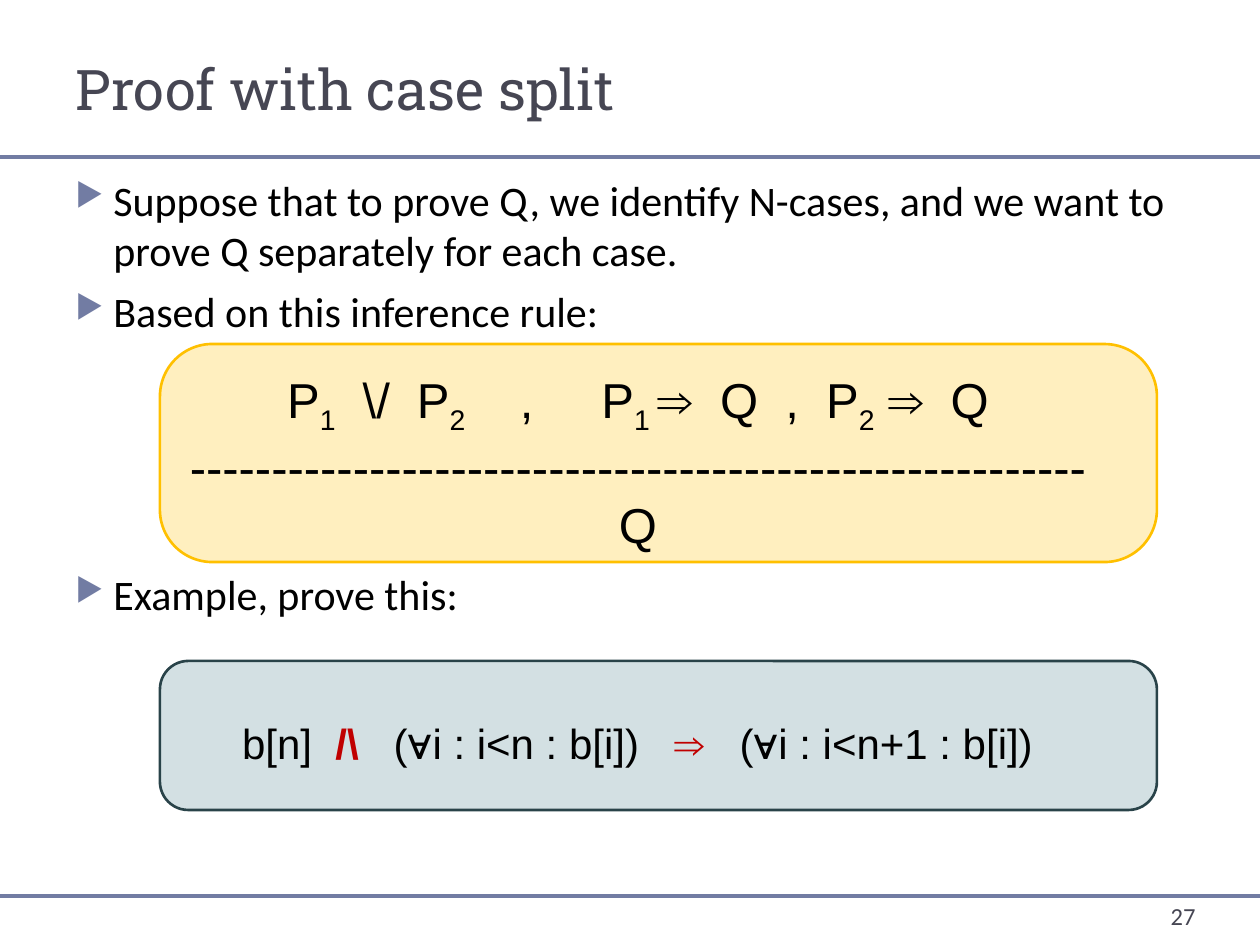
from dataclasses import dataclass

from lxml import etree
from pptx import Presentation
from pptx.dml.color import RGBColor
from pptx.enum.shapes import MSO_CONNECTOR, MSO_SHAPE
from pptx.enum.text import MSO_ANCHOR, MSO_AUTO_SIZE, PP_ALIGN
from pptx.oxml.ns import qn
from pptx.util import Emu, Pt

STRAIGHT = MSO_CONNECTOR.STRAIGHT
ROUNDED = MSO_SHAPE.ROUNDED_RECTANGLE
LEFT, CENTER, RIGHT = PP_ALIGN.LEFT, PP_ALIGN.CENTER, PP_ALIGN.RIGHT
BOTTOM = MSO_ANCHOR.BOTTOM
FIXED = MSO_AUTO_SIZE.NONE

EMU_PER_PX = 914400 / 126
WIDTH, HEIGHT = 1260, 945
BLACK, SLATE, ACCENT, RED = "000000", "464653", "727CA3", "C00000"


@dataclass(frozen=True)
class Box:
    left: int
    top: int
    width: int
    height: int

    def emu(self) -> tuple[Emu, ...]:
        return tuple(map(px, (self.left, self.top, self.width, self.height)))


@dataclass(frozen=True)
class Panel:
    box: Box
    corner: float
    fill: str
    outline: str


@dataclass(frozen=True)
class Piece:
    text: str
    subscript: bool = False
    color: str = BLACK
    bold: bool = False


@dataclass(frozen=True)
class Bullet:
    text: str
    space_before: int = 6


def px(length: int) -> Emu:
    return Emu(round(length * EMU_PER_PX))


def rgb(code: str) -> RGBColor:
    return RGBColor.from_string(code)


def style(paragraph, font: str, size: int, color: str = BLACK, align=LEFT) -> None:
    paragraph.alignment = align
    paragraph.font.name = font
    paragraph.font.size = Pt(size)
    paragraph.font.color.rgb = rgb(color)


def add_rule(slide, y: int) -> None:
    rule = slide.shapes.add_connector(STRAIGHT, 0, px(y), px(WIDTH), px(y))
    rule.line.color.rgb = rgb(ACCENT)
    rule.line.width = Pt(2.25)
    etree.SubElement(rule._element.spPr, qn("a:effectLst"))


def add_panel(slide, panel: Panel) -> None:
    """Draw a rounded panel with a 25 % opaque fill."""
    shape = slide.shapes.add_shape(ROUNDED, *panel.box.emu())
    shape.shadow.inherit = False
    shape.adjustments[0] = panel.corner
    shape.fill.solid()
    shape.fill.fore_color.rgb = rgb(panel.fill)
    tint = shape._element.spPr.find(qn("a:solidFill")).find(qn("a:srgbClr"))
    etree.SubElement(tint, qn("a:alpha"), val="25000")
    shape.line.color.rgb = rgb(panel.outline)
    shape.line.width = Pt(1.5)


def add_text_frame(slide, box: Box, wrap: bool = True):
    frame = slide.shapes.add_textbox(*box.emu()).text_frame
    frame.word_wrap = wrap
    return frame


def next_paragraph(frame, index: int):
    return frame.add_paragraph() if index else frame.paragraphs[0]


def add_bullets(slide, box: Box, bullets: list[Bullet]) -> None:
    frame = add_text_frame(slide, box)
    for index, bullet in enumerate(bullets):
        paragraph = next_paragraph(frame, index)
        paragraph.text = bullet.text
        style(paragraph, "Calibri", 24)
        paragraph.space_before = Pt(bullet.space_before)
        properties = paragraph._p.get_or_add_pPr()
        properties.set("marL", str(px(38)))
        properties.set("indent", str(-px(38)))
        marker = [
            etree.Element(qn("a:buClr")),
            etree.Element(qn("a:buSzPct"), val="76000"),
            etree.Element(qn("a:buChar"), char="▶"),
        ]
        etree.SubElement(marker[0], qn("a:srgbClr"), val=ACCENT)
        default_run = properties.find(qn("a:defRPr"))
        for element in marker:
            default_run.addprevious(element)


def add_formula(slide, box: Box, lines: list[list[Piece]], size: int, align) -> None:
    frame = add_text_frame(slide, box, wrap=False)
    for index, pieces in enumerate(lines):
        paragraph = next_paragraph(frame, index)
        style(paragraph, "Arial", size, align=align)
        for piece in pieces:
            run = paragraph.add_run()
            run.text = piece.text
            run.font.bold = piece.bold
            run.font.color.rgb = rgb(piece.color)
            if piece.subscript:
                run._r.get_or_add_rPr().set("baseline", "-25000")


PANELS = [
    Panel(Box(160, 661, 997, 149), 0.19, "528693", "294349"),
    Panel(Box(160, 344, 997, 218), 0.24, "FFC000", "FFC000"),
]
BULLETS = [
    Bullet("Suppose that to prove Q, we identify N-cases, and we want to "
           "prove Q separately for each case."),
    Bullet("Based on this inference rule:"),
    Bullet("Example, prove this:", space_before=133),
]
INFERENCE_RULE = [
    [Piece("P"), Piece("1", subscript=True), Piece("  \\/  P"),
     Piece("2", subscript=True), Piece("    ,     P"),
     Piece("1 ", subscript=True), Piece("⇒  Q  ,  P"),
     Piece("2", subscript=True), Piece(" ⇒  Q")],
    [Piece("-" * 55)],
    [Piece("Q")],
]
EXAMPLE = [
    [Piece(" b[n]  "), Piece("/\\", color=RED, bold=True),
     Piece("   (∀i : i<n : b[i])   "), Piece("⇒   ", color=RED, bold=True),
     Piece("(∀i : i<n+1 : b[i])")],
]


def main() -> None:
    deck = Presentation()
    deck.slide_width, deck.slide_height = px(WIDTH), px(HEIGHT)
    slide = deck.slides.add_slide(deck.slide_layouts[5])

    for y in (157, 896):
        add_rule(slide, y)
    for panel in PANELS:
        add_panel(slide, panel)

    title = slide.shapes.title
    title.left, title.top, title.width, title.height = Box(63, 21, 1134, 107).emu()
    title.text_frame.text = "Proof with case split"
    title.text_frame.auto_size = FIXED
    title.text_frame.vertical_anchor = BOTTOM
    style(title.text_frame.paragraphs[0], "Roboto Slab", 32, SLATE)

    add_bullets(slide, Box(63, 168, 1134, 680), BULLETS)
    add_formula(slide, Box(160, 363, 956, 190), INFERENCE_RULE, 28, CENTER)
    add_formula(slide, Box(218, 711, 879, 63), EXAMPLE, 24, LEFT)

    page_number = add_text_frame(slide, Box(935, 895, 273, 50)).paragraphs[0]
    page_number.text = "27"
    style(page_number, "Calibri", 14, SLATE, RIGHT)

    deck.save("out.pptx")


if __name__ == "__main__":
    main()
